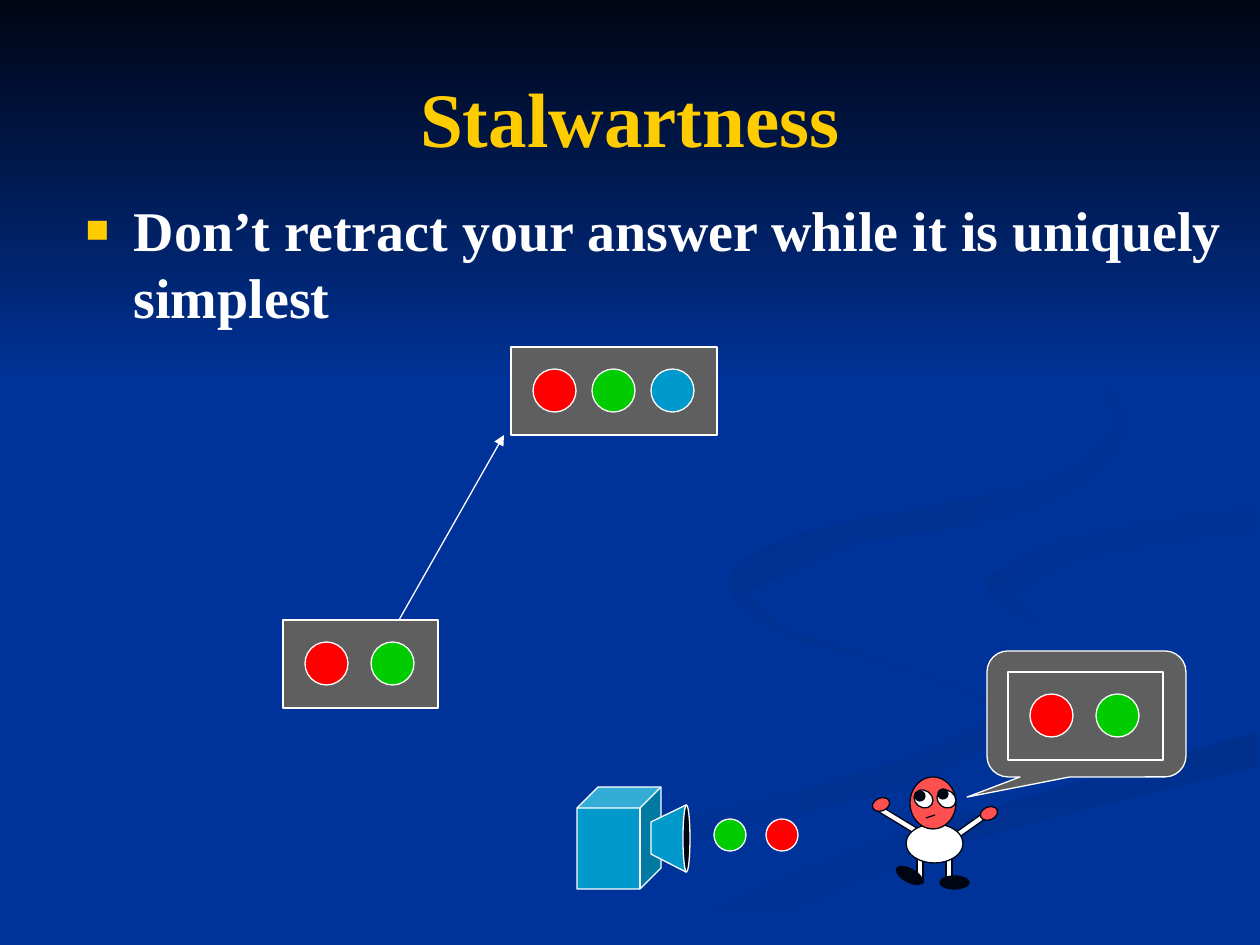
from dataclasses import dataclass

from lxml import etree
from pptx import Presentation
from pptx.dml.color import RGBColor
from pptx.enum.shapes import MSO_CONNECTOR, MSO_SHAPE
from pptx.enum.text import MSO_ANCHOR, MSO_AUTO_SIZE, PP_ALIGN
from pptx.oxml.ns import qn
from pptx.util import Pt

RECT, OVAL, CUBE = MSO_SHAPE.RECTANGLE, MSO_SHAPE.OVAL, MSO_SHAPE.CUBE
CALLOUT = MSO_SHAPE.ROUNDED_RECTANGULAR_CALLOUT
STRAIGHT = MSO_CONNECTOR.STRAIGHT
EMU_PER_PX = 914400 / 126
FONT = "Times New Roman"
BLUE, INK, WHITE, GOLD = "003399", "000514", "FFFFFF", "FFCC00"
GREY, RED, GREEN, CYAN, SKIN = "5F5F5F", "FF0000", "00CC00", "0099CC", "FF5050"
LAMP, LAMP_INSET, PANEL_HEIGHT = 43, 22, 88
CURVE_STEPS = 4

Point = tuple[int, int]


@dataclass
class Ribbon:
    start: str
    end: str
    angle: int  # clockwise from left to right
    edges: list[list[Point]]


@dataclass
class Panel:
    left: int
    top: int
    width: int
    step: int
    lamps: list[str]


@dataclass
class Part:
    kind: int
    left: int
    top: int
    width: int
    height: int
    fill: str
    line: str = WHITE
    turn: float = 0


# Edge shared by the lower ribbon and the band above it
SHORE = [(634, 944), (794, 873), (963, 815), (1257, 732)]

RIBBONS = [
    Ribbon(BLUE, "003193", 0, [
        [(724, 578), (748, 611), (859, 654), (984, 697), (1008, 732), (908, 785), (711, 838), (455, 944)],
        [(378, 944), (577, 849), (862, 772), (990, 713), (917, 674), (770, 629), (724, 578)]]),
    Ribbon(BLUE, "003193", 45, [
        [(912, 585), (955, 627), (1096, 668), (1188, 718), (1126, 762)],
        [(1157, 732), (1056, 675), (940, 630), (912, 585)]]),
    Ribbon("002F8C", BLUE, 90, [SHORE, [(1257, 767), (948, 847), (719, 944)]]),
    Ribbon(BLUE, BLUE, 0, [
        [(914, 585), (999, 641), (1188, 718), (1062, 779), (780, 862), (601, 944)],
        SHORE,
        [(1259, 678), (1068, 634), (984, 583), (1071, 538), (1259, 507)],
        [(1259, 488), (1072, 518), (914, 585)]]),
    Ribbon("003091", BLUE, 45, [
        [(984, 580), (997, 602), (1041, 625)],
        [(1014, 595), (1082, 558), (1257, 529)],
        [(1257, 507), (1070, 538), (984, 580)]]),
    Ribbon("002F8E", BLUE, 45, [
        [(861, 542), (1040, 507), (1126, 433), (1089, 367)],
        [(1120, 422), (1046, 481), (803, 532), (727, 582), (784, 630)],
        [(747, 592), (861, 542)]]),
]


def px(length: int) -> int:
    return round(length * EMU_PER_PX)


def rgb(colour: str) -> RGBColor:
    return RGBColor.from_string(colour)


def smooth(edge: list[Point]) -> list[Point]:
    """Round an edge off with a Catmull-Rom curve through its points."""
    padded = [edge[0], *edge, edge[-1]]
    curve = []
    for before, start, end, after in zip(padded, padded[1:], padded[2:], padded[3:]):
        for step in range(CURVE_STEPS):
            t = step / CURVE_STEPS
            curve.append(tuple(
                round(b + (c - a) * t / 2 + (a - 2.5 * b + 2 * c - d / 2) * t ** 2
                      + (3 * (b - c) + d - a) * t ** 3 / 2)
                for a, b, c, d in zip(before, start, end, after)))
    return curve + [edge[-1]]


def paint(shape, fill: str, line: str) -> None:
    shape.shadow.inherit = False
    shape.fill.solid()
    shape.fill.fore_color.rgb = rgb(fill)
    shape.line.color.rgb = rgb(line)
    shape.line.width = Pt(0.75)


def draw_outline(shapes, points: list[Point]):
    builder = shapes.build_freeform(*points[0], scale=EMU_PER_PX)
    builder.add_line_segments(points[1:], close=True)
    return builder.convert_to_shape()


def shade(shape, start: str, end: str, angle: int) -> None:
    shape.line.fill.background()
    shape.fill.gradient()
    shape.fill.gradient_angle = -angle % 360
    for stop, colour in zip(shape.fill.gradient_stops, (start, end)):
        stop.color.rgb = rgb(colour)


def draw_backdrop(shapes) -> None:
    for ribbon in RIBBONS:
        outline = [point for edge in ribbon.edges for point in smooth(edge)]
        shape = draw_outline(shapes, outline)
        paint(shape, ribbon.start, ribbon.start)
        shade(shape, ribbon.start, ribbon.end, ribbon.angle)
    sky = draw_part(shapes, Part(RECT, 0, 0, 1260, 388, INK))
    shade(sky, INK, BLUE, 90)


def draw_part(shapes, part: Part):
    box = map(px, (part.left, part.top, part.width, part.height))
    shape = shapes.add_shape(part.kind, *box)
    shape.rotation = part.turn
    paint(shape, part.fill, part.line)
    return shape


def draw_panel(shapes, panel: Panel) -> None:
    draw_part(shapes, Part(RECT, panel.left, panel.top, panel.width, PANEL_HEIGHT, GREY))
    for i, colour in enumerate(panel.lamps):
        left = panel.left + LAMP_INSET + i * panel.step
        draw_part(shapes, Part(OVAL, left, panel.top + LAMP_INSET, LAMP, LAMP, colour))


def draw_line(shapes, start: Point, end: Point, colour: str, arrow: bool = False) -> None:
    connector = shapes.add_connector(STRAIGHT, *map(px, start + end))
    connector.line.color.rgb = rgb(colour)
    connector.line.width = Pt(0.75)
    properties = connector.element.spPr
    if arrow:
        etree.SubElement(properties.find(qn("a:ln")), qn("a:tailEnd"), type="triangle")
    etree.SubElement(properties, qn("a:effectLst"))


def draw_learner(shapes) -> None:
    arms = [Part(RECT, left, top, 45, 6, WHITE, INK, turn)
            for left, top, turn in ((877, 818, 31.3), (946, 824, 324.7))]
    legs = [Part(RECT, left, 854, 6, 29, WHITE, INK) for left in (946, 917)]
    trunk = [Part(OVAL, 906, 824, 57, 39, WHITE, INK), Part(OVAL, 910, 777, 46, 52, SKIN, INK)]
    eyes = [eye for left, pupil_top in ((915, 791), (938, 789)) for eye in (
        Part(OVAL, left, 789, 17, 20, WHITE, INK, 306),
        Part(OVAL, left, pupil_top, 10, 10, INK, INK, 306))]
    feet = [Part(OVAL, left, top, 29, 13, INK, INK, turn)
            for left, top, turn in ((895, 869, 28.7), (940, 876, 0))]
    hands = [Part(OVAL, left, top, 18, 13, SKIN, INK, 337.1)
             for left, top in ((980, 807), (872, 798))]
    for part in arms + legs + trunk + eyes + feet + hands:
        draw_part(shapes, part)
    draw_line(shapes, (926, 818), (935, 815), INK)


def write(placeholder, box: tuple[int, int, int, int], text: str, size: int, colour: str):
    """Fill a placeholder, bring it to the front and return its paragraph."""
    placeholder.left, placeholder.top, placeholder.width, placeholder.height = map(px, box)
    placeholder.element.getparent().append(placeholder.element)
    frame = placeholder.text_frame
    frame.text = text
    frame.auto_size = MSO_AUTO_SIZE.NONE
    font = frame.paragraphs[0].runs[0].font
    font.name, font.size, font.bold = FONT, Pt(size), True
    font.color.rgb = rgb(colour)
    return frame.paragraphs[0]


def add_bullet(paragraph) -> None:
    props = paragraph._p.get_or_add_pPr()
    props.set("marL", str(px(48)))
    props.set("indent", str(px(-48)))
    bullet_colour = etree.SubElement(props, qn("a:buClr"))
    etree.SubElement(bullet_colour, qn("a:srgbClr"), val=GOLD)
    etree.SubElement(props, qn("a:buSzPct"), val="70000")
    etree.SubElement(props, qn("a:buFont"), typeface=FONT)
    etree.SubElement(props, qn("a:buChar"), char="■")


def main() -> None:
    deck = Presentation()
    deck.slide_width, deck.slide_height = px(1260), px(945)
    slide = deck.slides.add_slide(deck.slide_layouts[1])
    shapes = slide.shapes
    slide.background.fill.solid()
    slide.background.fill.fore_color.rgb = rgb(BLUE)
    draw_backdrop(shapes)

    heading = write(shapes.title, (63, 38, 1134, 157), "Stalwartness", 44, GOLD)
    heading.alignment = PP_ALIGN.CENTER
    shapes.title.text_frame.vertical_anchor = MSO_ANCHOR.MIDDLE
    advice = write(slide.placeholders[1], (73, 189, 1166, 294),
                   "Don’t retract your answer while it is uniquely simplest", 32, WHITE)
    advice.space_before = Pt(6.4)
    add_bullet(advice)

    draw_panel(shapes, Panel(283, 620, 155, 66, [RED, GREEN]))
    draw_panel(shapes, Panel(511, 347, 206, 59, [RED, GREEN, CYAN]))
    draw_line(shapes, (399, 620), (504, 435), WHITE, arrow=True)
    draw_learner(shapes)

    draw_part(shapes, Part(CUBE, 577, 787, 84, 102, CYAN))
    paint(draw_outline(shapes, [(686, 805), (651, 822), (651, 854), (686, 872)]), CYAN, WHITE)
    draw_part(shapes, Part(OVAL, 683, 805, 7, 67, INK))
    for left, colour in ((766, RED), (714, GREEN)):
        draw_part(shapes, Part(OVAL, left, 819, 32, 32, colour))

    thought = draw_part(shapes, Part(CALLOUT, 987, 651, 199, 126, GREY))
    thought.adjustments[0], thought.adjustments[1] = -0.6, 0.66
    draw_panel(shapes, Panel(1008, 672, 155, 66, [RED, GREEN]))
    deck.save("out.pptx")


if __name__ == "__main__":
    main()
